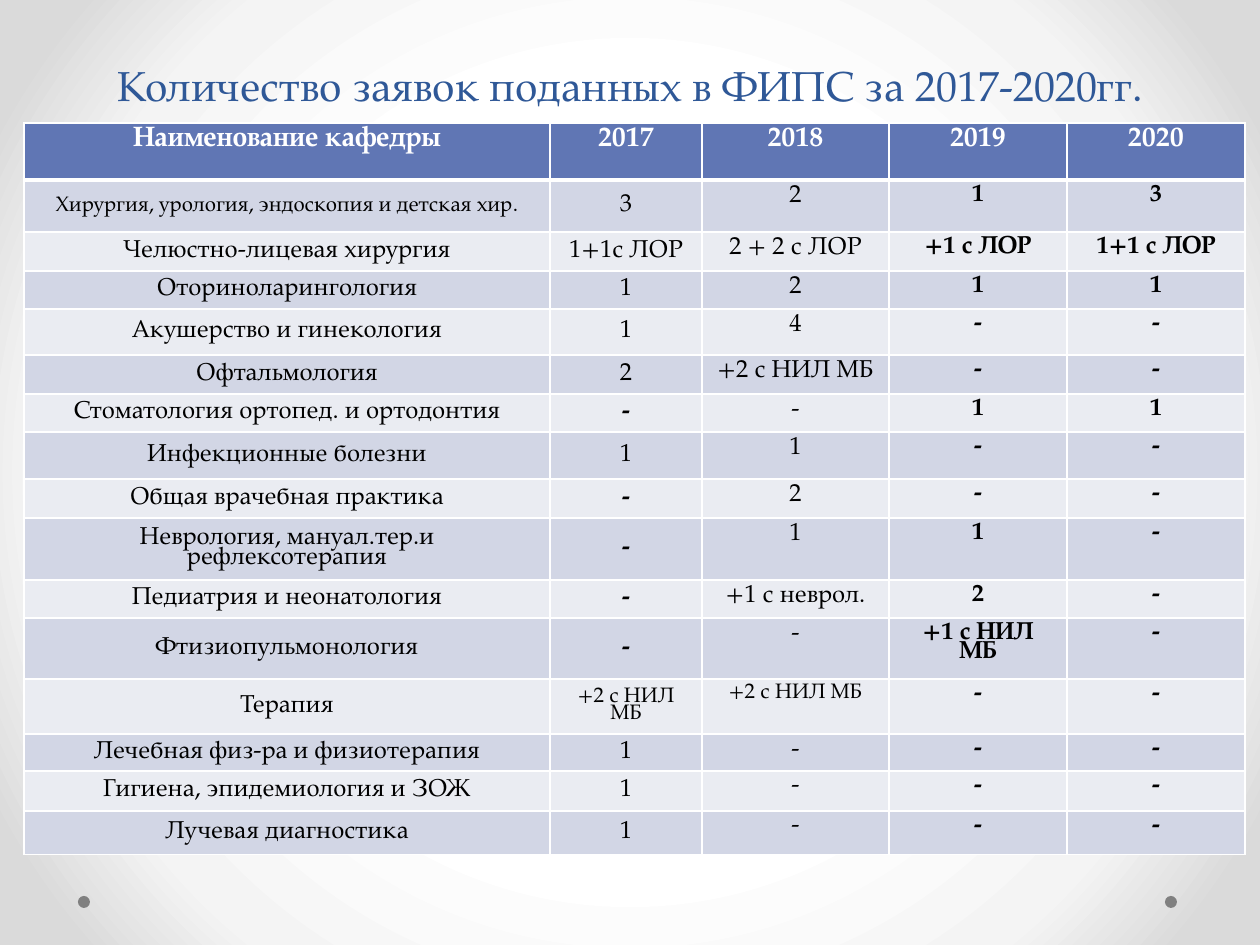
from lxml import etree
from pptx import Presentation
from pptx.dml.color import RGBColor
from pptx.enum.shapes import MSO_SHAPE
from pptx.enum.text import MSO_ANCHOR, PP_ALIGN
from pptx.oxml import parse_xml
from pptx.oxml.ns import nsdecls, qn
from pptx.util import Emu, Pt

OVAL = MSO_SHAPE.OVAL
TOP, MIDDLE, BOTTOM = MSO_ANCHOR.TOP, MSO_ANCHOR.MIDDLE, MSO_ANCHOR.BOTTOM
CENTER = PP_ALIGN.CENTER

PX = 914400 / 126
FONT = "TeX Gyre Pagella"
WHITE, BLACK, BLUE, GREY = "FFFFFF", "000000", "2F5897", "808080"
HEADER_FILL, ODD_FILL, EVEN_FILL = "6076B4", "D2D6E5", "EAECF2"
BACKGROUND_STOPS = [(50, "FFFFFF"), (76, "F4F4F4"), (92, "DADADA")]

TITLE = "Количество заявок поданных в ФИПС за 2017-2020гг."
COLUMN_WIDTHS = [526, 152, 187, 178, 178]
ROW_HEIGHTS = [57, 52, 39, 38, 46, 39, 38, 47, 39, 62, 38, 61, 55, 37, 40, 44]
ROWS = [
    ("Наименование кафедры", "2017", "2018", "2019", "2020"),
    ("Хирургия, урология, эндоскопия и детская хир.", "3", "2", "1", "3"),
    ("Челюстно-лицевая хирургия", "1+1с ЛОР", "2 + 2 с ЛОР", "+1 с ЛОР", "1+1 с ЛОР"),
    ("Оториноларингология", "1", "2", "1", "1"),
    ("Акушерство и гинекология", "1", "4", "-", "-"),
    ("Офтальмология", "2", "+2 с НИЛ МБ", "-", "-"),
    ("Стоматология ортопед. и ортодонтия", "-", "-", "1", "1"),
    ("Инфекционные болезни", "1", "1", "-", "-"),
    ("Общая врачебная практика", "-", "2", "-", "-"),
    ("Неврология, мануал.тер.и рефлексотерапия", "-", "1", "1", "-"),
    ("Педиатрия и неонатология", "-", "+1 с неврол.", "2", "-"),
    ("Фтизиопульмонология", "-", "-", "+1 с НИЛ МБ", "-"),
    ("Терапия", "+2 с НИЛ МБ", "+2 с НИЛ МБ", "-", "-"),
    ("Лечебная физ-ра и физиотерапия", "1", "-", "-", "-"),
    ("Гигиена, эпидемиология и ЗОЖ", "1", "-", "-", "-"),
    ("Лучевая диагностика", "1", "-", "-", "-"),
]
SMALL_CELLS = {(1, 0), (12, 1), (12, 2)}


def px(length):
    return Emu(round(length * PX))


def color(code):
    return RGBColor.from_string(code)


def write(frame, text, size, ink, bold=False, spacing=None):
    para = frame.paragraphs[0]
    para.alignment = CENTER
    para.line_spacing = spacing
    span = para.add_run()
    span.text = text
    span.font.name = FONT
    span.font.size = Pt(size)
    span.font.bold = bold
    span.font.color.rgb = color(ink)


def set_background(page):
    stops = "".join(
        f'<a:gs pos="{place * 1000}"><a:srgbClr val="{code}"/></a:gs>'
        for place, code in BACKGROUND_STOPS
    )
    background = parse_xml(
        f'<p:bg {nsdecls("p", "a")}><p:bgPr><a:gradFill rotWithShape="1">'
        f'<a:gsLst>{stops}</a:gsLst><a:path path="circle">'
        '<a:fillToRect l="50000" t="50000" r="50000" b="50000"/></a:path>'
        "</a:gradFill><a:effectLst/></p:bgPr></p:bg>"
    )
    page.element.cSld.insert(0, background)


def add_dot(page, left, top, size):
    dot = page.shapes.add_shape(OVAL, px(left), px(top), px(size), px(size))
    dot.shadow.inherit = False
    dot.fill.solid()
    dot.fill.fore_color.rgb = color(GREY)
    dot.line.fill.background()


def add_title(page):
    title = page.shapes.title
    title.left, title.top, title.width, title.height = px(63), px(0), px(1134), px(116)
    title.text_frame.vertical_anchor = BOTTOM
    write(title.text_frame, TITLE, 24, BLUE, spacing=Pt(58))


def add_borders(cell, **widths):
    properties = cell._tc.get_or_add_tcPr()
    for side in "LRTB":
        width = str(Pt(widths.get(side, 1)))
        line = etree.SubElement(properties, qn(f"a:ln{side}"), w=width)
        solid = etree.SubElement(line, qn("a:solidFill"))
        etree.SubElement(solid, qn("a:srgbClr"), val=WHITE)


def fill_cell(cell, row, column, text):
    header = row == 0
    # Thick rule between the header and the body
    add_borders(cell, B=3 if header else 1, T=3 if row == 1 else 1)
    cell.fill.solid()
    band = ODD_FILL if row % 2 else EVEN_FILL
    cell.fill.fore_color.rgb = color(HEADER_FILL if header else band)
    cell.vertical_anchor = MIDDLE if column < 2 and not header else TOP
    size = 16 if header else 12 if (row, column) in SMALL_CELLS else 14
    bold = header or column > 2 or (column == 1 and text == "-")
    write(cell.text_frame, text, size, WHITE if header else BLACK, bold, spacing=0.8)


def add_applications_table(page):
    table = page.shapes.add_table(
        len(ROWS), len(COLUMN_WIDTHS), px(24), px(123),
        px(sum(COLUMN_WIDTHS)), px(sum(ROW_HEIGHTS)),
    ).table
    for column, width in zip(table.columns, COLUMN_WIDTHS):
        column.width = px(width)
    for row, height in zip(table.rows, ROW_HEIGHTS):
        row.height = px(height)
    for row, values in enumerate(ROWS):
        for column, text in enumerate(values):
            fill_cell(table.cell(row, column), row, column, text)


def main():
    deck = Presentation()
    deck.slide_width, deck.slide_height = px(1260), px(945)
    page = deck.slides.add_slide(deck.slide_layouts[5])
    set_background(page)
    # Corner dots
    for left in (1165, 78):
        add_dot(page, left, 896, 12)
    add_title(page)
    add_applications_table(page)
    deck.save("out.pptx")


if __name__ == "__main__":
    main()
